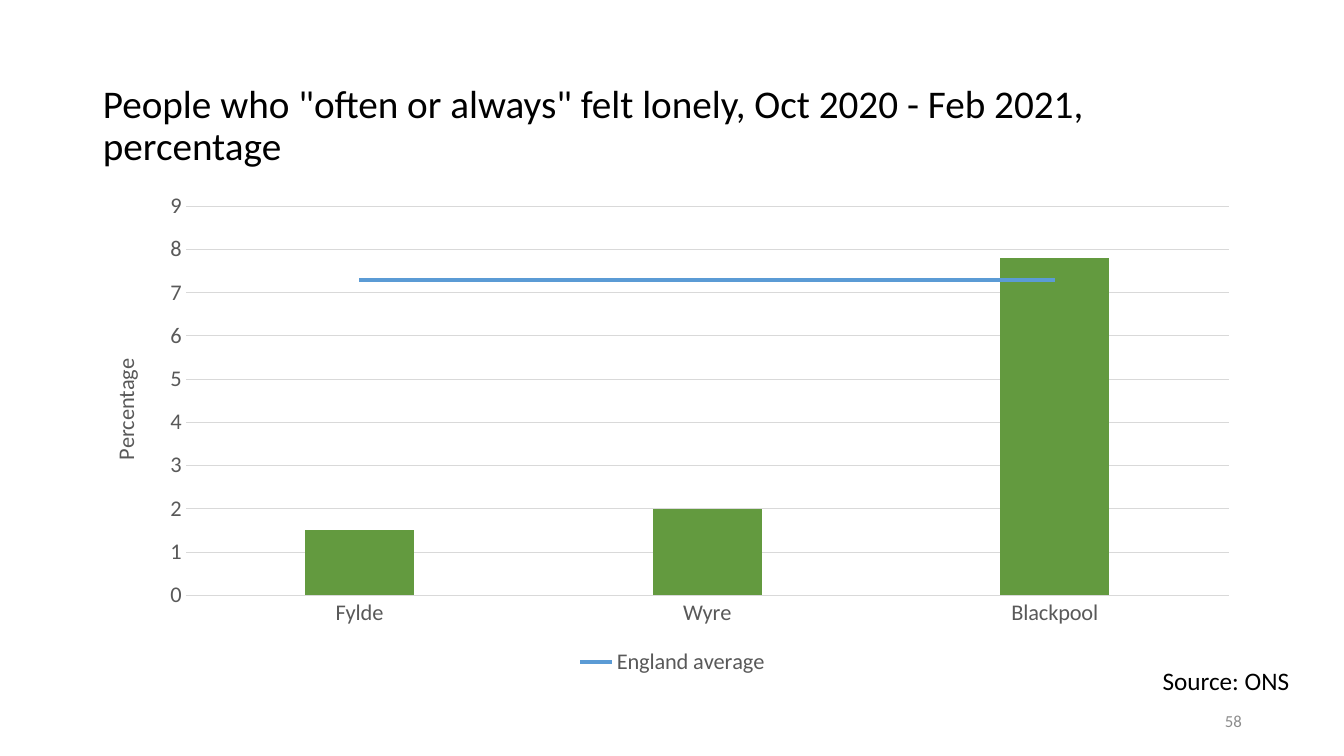
from dataclasses import dataclass

from pptx import Presentation
from pptx import util as u
from pptx.chart.data import CategoryChartData
from pptx.dml.color import RGBColor
from pptx.enum import chart as ch
from pptx.enum import text
from pptx.oxml import parse_xml
from pptx.oxml.ns import nsdecls, qn


@dataclass(frozen=True)
class Theme:
    font: str = "Calibri"
    ink: str = "000000"
    label: str = "595959"
    faint: str = "8C8C8C"
    grid: str = "D9D9D9"
    bar: str = "639A3F"
    average: str = "5B9BD5"
    title_size: int = 28
    source_size: int = 18
    chart_size: int = 16
    number_size: int = 12
    hairline: float = 0.75
    average_line: float = 3


@dataclass(frozen=True)
class Box:
    left: float
    top: float
    width: float
    height: float

    def lengths(self):
        return [u.Cm(n) for n in (self.left, self.top, self.width, self.height)]


THEME = Theme()


def style_font(font, size, color):
    font.name = THEME.font
    font.size = u.Pt(size)
    font.bold = False
    font.color.rgb = RGBColor.from_string(color)


def style_line(line, width, color):
    line.width = u.Pt(width)
    line.color.rgb = RGBColor.from_string(color)


def add_title(page, box, words):
    title = page.shapes.title
    title.left, title.top, title.width, title.height = box.lengths()
    frame = title.text_frame
    frame.text = words
    frame.word_wrap = True
    frame.auto_size = text.MSO_AUTO_SIZE.NONE
    frame.vertical_anchor = text.MSO_ANCHOR.MIDDLE
    para = frame.paragraphs[0]
    para.alignment = text.PP_ALIGN.LEFT
    para.line_spacing = 0.9
    style_font(para.runs[0].font, THEME.title_size, THEME.ink)


def add_right_text(page, box, words, size, color, anchor):
    frame = page.shapes.add_textbox(*box.lengths()).text_frame
    frame.text = words
    frame.word_wrap = True
    frame.vertical_anchor = anchor
    para = frame.paragraphs[0]
    para.alignment = text.PP_ALIGN.RIGHT
    style_font(para.runs[0].font, size, color)


def move_last_series_to_line(chart):
    bars = chart._chartSpace.find(".//" + qn("c:barChart"))
    series = bars.findall(qn("c:ser"))[-1]
    for bar_only in series.findall(qn("c:invertIfNegative")):
        series.remove(bar_only)
    lines = parse_xml(
        f'<c:lineChart {nsdecls("c")}><c:grouping val="standard"/>'
        '<c:varyColors val="0"/><c:marker val="1"/></c:lineChart>')
    lines.insert(2, series)
    for axis in bars.findall(qn("c:axId")):
        lines.append(parse_xml(f'<c:axId {nsdecls("c")} val="{axis.get("val")}"/>'))
    bars.addnext(lines)


def place_plot(chart, left, top, width, height):
    area = chart._chartSpace.find(".//" + qn("c:plotArea"))
    for layout in area.findall(qn("c:layout")):
        area.remove(layout)
    sizes = "".join(f'<c:{tag} val="{share}"/>' for tag, share in
                    zip("xywh", (left, top, width, height)))
    area.insert(0, parse_xml(
        f'<c:layout {nsdecls("c")}><c:manualLayout><c:layoutTarget val="inner"/>'
        f'<c:xMode val="edge"/><c:yMode val="edge"/>{sizes}'
        '</c:manualLayout></c:layout>'))


def style_axes(chart):
    categories, values = chart.category_axis, chart.value_axis
    for axis in (categories, values):
        axis.major_tick_mark = ch.XL_TICK_MARK.NONE
        axis.minor_tick_mark = ch.XL_TICK_MARK.NONE
        style_font(axis.tick_labels.font, THEME.chart_size, THEME.label)
    style_line(categories.format.line, THEME.hairline, THEME.grid)
    values.format.line.fill.background()
    values.minimum_scale, values.maximum_scale, values.major_unit = 0, 9, 1
    style_line(values.major_gridlines.format.line, THEME.hairline, THEME.grid)
    frame = values.axis_title.text_frame
    frame.text = "Percentage"
    style_font(frame.paragraphs[0].runs[0].font, THEME.chart_size, THEME.label)


def add_legend(chart, hidden):
    chart.has_legend = True
    legend = chart.legend
    legend.position = ch.XL_LEGEND_POSITION.BOTTOM
    legend.include_in_layout = False
    style_font(legend.font, THEME.chart_size, THEME.label)
    entry = parse_xml(
        f'<c:legendEntry {nsdecls("c")}><c:idx val="{hidden}"/>'
        '<c:delete val="1"/></c:legendEntry>')
    chart._chartSpace.find(".//" + qn("c:legendPos")).addnext(entry)


def add_loneliness_chart(page, box):
    data = CategoryChartData()
    data.categories = ["Fylde", "Wyre", "Blackpool"]
    data.add_series("Series 1", (1.5, 2, 7.8))
    data.add_series("England average", (7.3,) * 3)
    chart = page.shapes.add_chart(
        ch.XL_CHART_TYPE.COLUMN_CLUSTERED, *box.lengths(), data).chart
    chart.has_title = False
    style_font(chart.font, THEME.chart_size, THEME.label)
    move_last_series_to_line(chart)
    place_plot(chart, 0.08, 0.05, 0.9, 0.78)
    style_axes(chart)
    add_legend(chart, hidden=0)

    bars, lines = chart.plots
    bars.vary_by_categories = False
    bars.gap_width = 219
    fill = bars.series[0].format.fill
    fill.solid()
    fill.fore_color.rgb = RGBColor.from_string(THEME.bar)
    average = lines.series[0]
    average.smooth = False
    average.marker.style = ch.XL_MARKER_STYLE.NONE
    style_line(average.format.line, THEME.average_line, THEME.average)


def build_chart_page(deck):
    page = deck.slides.add_slide(deck.slide_layouts[5])
    add_title(page, Box(2.34, 1.83, 29.21, 2.74),
              'People who "often or always" felt lonely, Oct 2020 - Feb 2021, percentage')
    add_loneliness_chart(page, Box(2.34, 4.57, 29.21, 12.57))
    add_right_text(page, Box(23.93, 17.65, 7.62, 1.02), "58",
                   THEME.number_size, THEME.faint, text.MSO_ANCHOR.MIDDLE)
    add_right_text(page, Box(26.31, 16.64, 6.43, 1.02), "Source: ONS",
                   THEME.source_size, THEME.ink, text.MSO_ANCHOR.TOP)


def main():
    deck = Presentation()
    deck.slide_width, deck.slide_height = u.Cm(33.87), u.Cm(19.05)
    build_chart_page(deck)
    deck.save("out.pptx")


if __name__ == "__main__":
    main()
